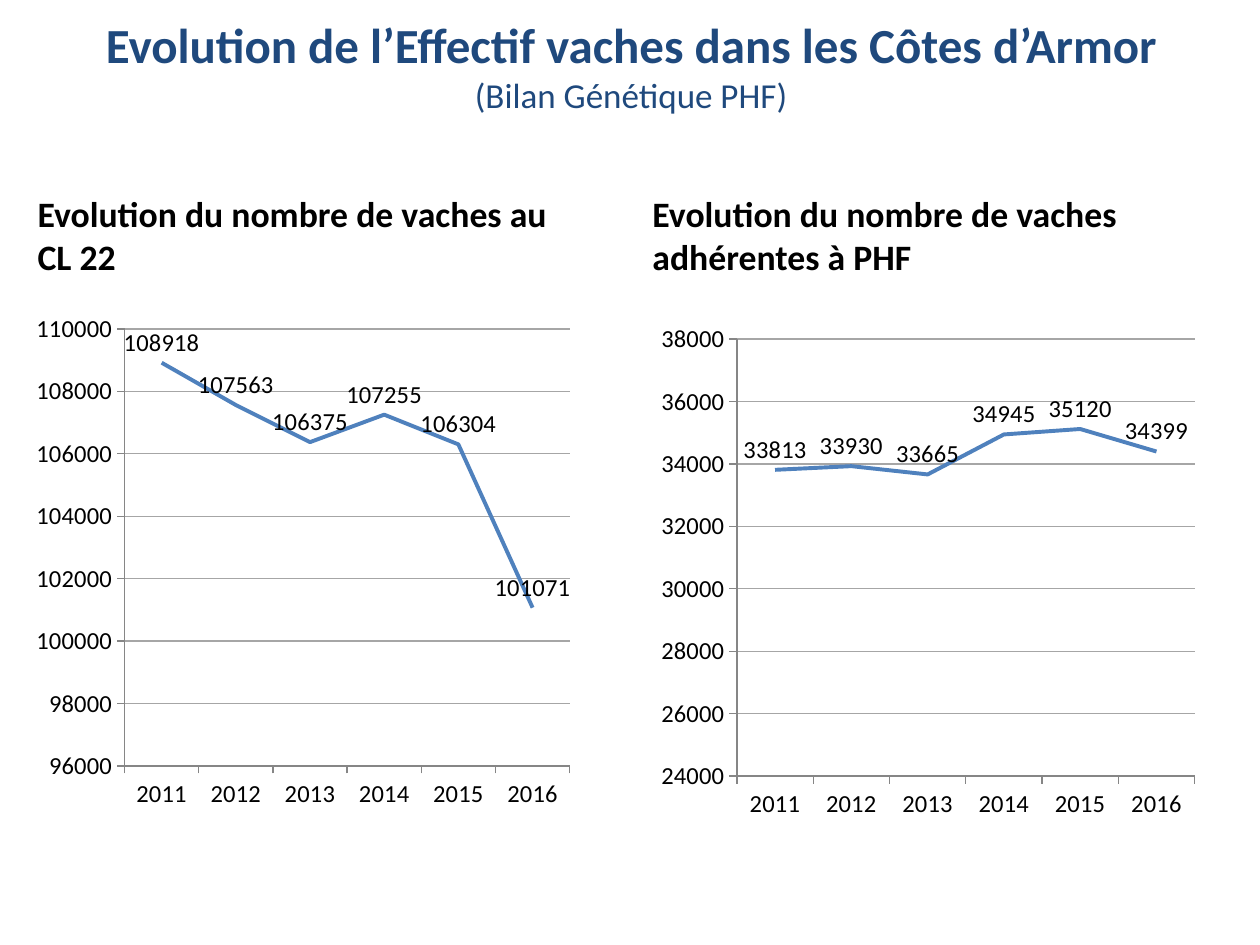
import pptx
import pptx.chart.data
import pptx.dml.color
import pptx.enum.chart
import pptx.enum.text
import pptx.util

Inches = pptx.util.Inches
Pt = pptx.util.Pt

FONT = "Calibri"
COLORS = {"title": "1F497D", "text": "000000", "line": "4F81BD",
          "grid": "A6A6A6", "axis": "868686"}
YEARS = ["2011", "2012", "2013", "2014", "2015", "2016"]


def rgb(name):
    return pptx.dml.color.RGBColor.from_string(COLORS[name])


def set_font(font, size, color="text", bold=False):
    font.name = FONT
    font.size = Pt(size)
    font.bold = bold
    font.color.rgb = rgb(color)


def write(para, text, *, size, color="text", bold=False):
    span = para.add_run()
    span.text = text
    set_font(span.font, size, color, bold)


def prepare_frame(box, anchor):
    frame = box.text_frame
    frame.word_wrap = True
    frame.auto_size = pptx.enum.text.MSO_AUTO_SIZE.NONE
    frame.vertical_anchor = anchor
    return frame.paragraphs[0]


def add_title(page, heading, subtitle):
    box = page.shapes.title
    box.left, box.top = Inches(0.51), Inches(0.13)
    box.width, box.height = Inches(9), Inches(0.77)
    para = prepare_frame(box, pptx.enum.text.MSO_ANCHOR.MIDDLE)
    para.alignment = pptx.enum.text.PP_ALIGN.CENTER
    write(para, heading, size=28, color="title", bold=True)
    para.add_line_break()
    write(para, subtitle, size=20, color="title")


def add_heading(page, left, text):
    box = page.shapes.add_textbox(Inches(left), Inches(1.55), Inches(4.42), Inches(0.7))
    para = prepare_frame(box, pptx.enum.text.MSO_ANCHOR.BOTTOM)
    write(para, text, size=20.4, bold=True)


def style_axis(axis):
    axis.major_tick_mark = pptx.enum.chart.XL_TICK_MARK.OUTSIDE
    axis.minor_tick_mark = pptx.enum.chart.XL_TICK_MARK.NONE
    axis.format.line.color.rgb = rgb("axis")
    axis.format.line.width = Pt(0.75)


def add_line_chart(page, left, top, values, low, high):
    data = pptx.chart.data.CategoryChartData(number_format="0")
    data.categories = YEARS
    data.add_series("Series 1", values)
    chart = page.shapes.add_chart(
        pptx.enum.chart.XL_CHART_TYPE.LINE,
        Inches(left), Inches(top), Inches(4.41), Inches(4.09), data).chart
    chart.has_legend = False
    chart.has_title = False
    set_font(chart.font, 14)

    style_axis(chart.category_axis)
    scale = chart.value_axis
    style_axis(scale)
    scale.minimum_scale, scale.maximum_scale, scale.major_unit = low, high, 2000
    scale.has_major_gridlines = True
    scale.major_gridlines.format.line.color.rgb = rgb("grid")
    scale.major_gridlines.format.line.width = Pt(0.75)

    plot = chart.plots[0]
    plot.vary_by_categories = False
    series = plot.series[0]
    series.smooth = False
    series.marker.style = pptx.enum.chart.XL_MARKER_STYLE.NONE
    series.format.line.color.rgb = rgb("line")
    series.format.line.width = Pt(2.25)
    labels = series.data_labels
    labels.show_value = True
    labels.position = pptx.enum.chart.XL_LABEL_POSITION.ABOVE
    labels.number_format = "0"
    labels.number_format_is_linked = False
    set_font(labels.font, 14)


def main():
    deck = pptx.Presentation()
    deck.slide_width, deck.slide_height = Inches(10), Inches(7.5)
    page = deck.slides.add_slide(deck.slide_layouts[5])

    add_title(page, "Evolution de l’Effectif vaches dans les Côtes d’Armor",
              "(Bilan Génétique PHF)")
    add_heading(page, 0.2, "Evolution du nombre de vaches au CL 22")
    add_heading(page, 5.08, "Evolution du nombre de vaches adhérentes à PHF")
    add_line_chart(page, 0.2, 2.41,
                   [108918, 107563, 106375, 107255, 106304, 101071], 96000, 110000)
    add_line_chart(page, 5.16, 2.49,
                   [33813, 33930, 33665, 34945, 35120, 34399], 24000, 38000)
    deck.save("out.pptx")


if __name__ == "__main__":
    main()
